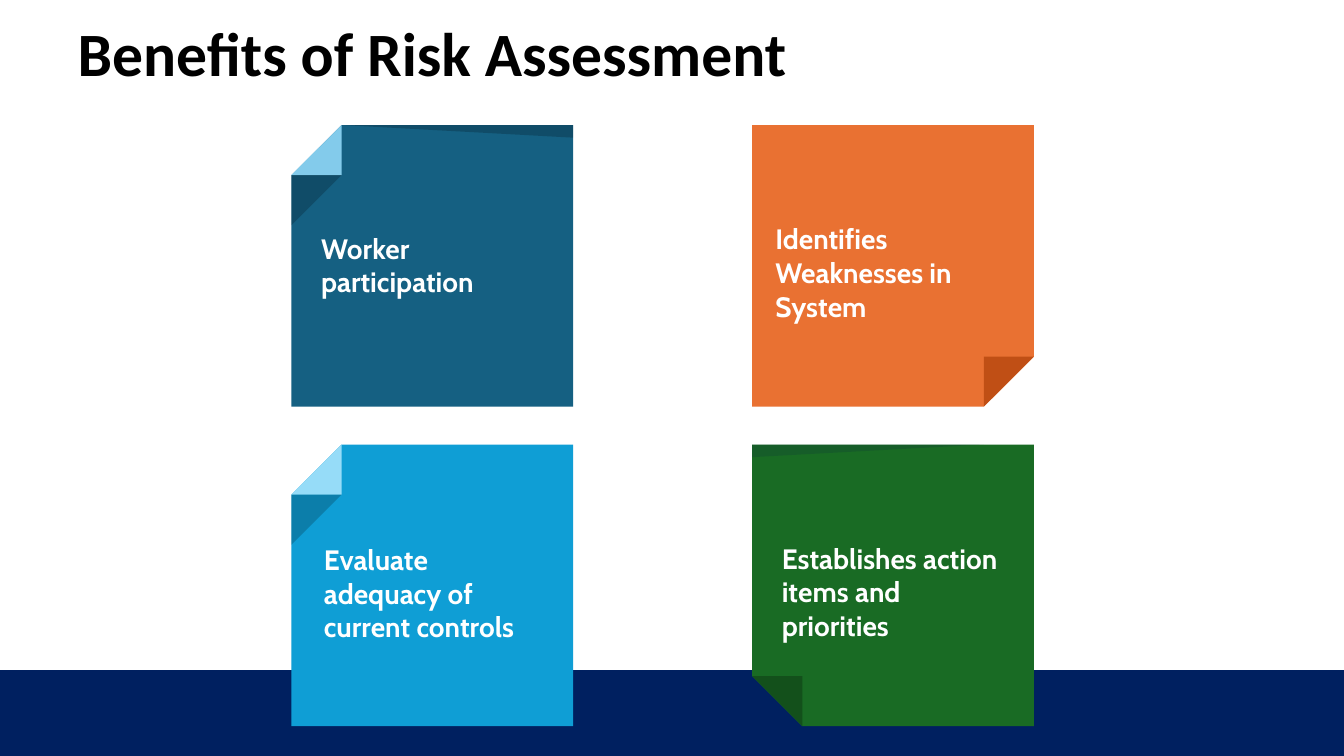
from dataclasses import dataclass

from lxml.etree import SubElement
from pptx import Presentation
from pptx.dml.color import RGBColor
from pptx.enum.shapes import MSO_SHAPE
from pptx.enum.text import MSO_AUTO_SIZE, PP_ALIGN
from pptx.oxml.ns import qn
from pptx.util import Inches, Pt


@dataclass(frozen=True)
class Theme:
    """Colours, fonts, type sizes and opacity."""
    navy: str = "002060"
    black: str = "000000"
    white: str = "FFFFFF"
    shade: str = "0E2841"
    teal: str = "156082"
    teal_flap: str = "83CBEB"
    orange: str = "E97132"
    orange_flap: str = "C04F15"
    blue: str = "0F9ED5"
    blue_flap: str = "96DCF8"
    green: str = "196B24"
    green_flap: str = "13501B"
    title_font: str = "Calibri"
    label_font: str = "Cabin"
    title_size: int = 44
    label_size: int = 20
    shade_opacity: int = 20


@dataclass(frozen=True)
class Grid:
    """Note positions by column and row, in inches; fold and shade are shares of a note."""
    left: float = 2.89
    top: float = 1.24
    column_step: float = 4.57
    row_step: float = 3.17
    side: float = 2.795
    fold: float = 0.178
    shade: float = 0.045

    def place(self, cell, share):
        column, row = cell
        x, y = share
        return (Inches(self.left + column * self.column_step + x * self.side),
                Inches(self.top + row * self.row_step + y * self.side))


def mirror(points, flip_x, flip_y):
    """Reflect unit-square points across the chosen axes."""
    return [(1 - x if flip_x else x, 1 - y if flip_y else y) for x, y in points]


class SlideBuilder:
    """Draws each kind of element on one slide in one style."""

    def __init__(self, deck, theme, grid):
        self.deck, self.theme, self.grid = deck, theme, grid
        self.page = deck.slides.add_slide(deck.slide_layouts[6])

    def fill(self, shape, color, opacity=100):
        shape.shadow.inherit = False
        shape.fill.solid()
        shape.fill.fore_color.rgb = RGBColor.from_string(color)
        if opacity < 100:
            tint = shape.fill._xPr.find(qn("a:solidFill"))[0]
            SubElement(tint, qn("a:alpha"), val=str(opacity * 1000))

    def band(self, top, height):
        width, full = self.deck.slide_width, self.deck.slide_height
        bar = self.page.shapes.add_shape(
            MSO_SHAPE.RECTANGLE, 0, int(full * top), width, int(full * height))
        self.fill(bar, self.theme.navy)
        bar.line.color.rgb = RGBColor.from_string(self.theme.navy)
        bar.line.width = Pt(1.5)

    def text(self, shapes, frame, words, font, size, color, wrap=True, align=PP_ALIGN.LEFT):
        box = shapes.add_textbox(*frame)
        box.text_frame.word_wrap = wrap
        box.text_frame.auto_size = MSO_AUTO_SIZE.SHAPE_TO_FIT_TEXT
        para = box.text_frame.paragraphs[0]
        para.text = words
        para.alignment = align
        para.font.name = font
        para.font.size = Pt(size)
        para.font.bold = True
        para.font.color.rgb = RGBColor.from_string(color)

    def title(self, words, left, top, width, height):
        full_width, full_height = self.deck.slide_width, self.deck.slide_height
        frame = [int(full_width * left), int(full_height * top),
                 int(full_width * width), int(full_height * height)]
        self.text(self.page.shapes, frame, words, self.theme.title_font,
                  self.theme.title_size, self.theme.black, False, PP_ALIGN.CENTER)

    def polygon(self, shapes, cell, points, color, opacity=100):
        start, *rest = [self.grid.place(cell, point) for point in points]
        outline = shapes.build_freeform(*start)
        outline.add_line_segments(rest, close=True)
        piece = outline.convert_to_shape()
        self.fill(piece, color, opacity)
        piece.line.fill.background()

    def note(self, cell, words, label, color, flap_color, flip=(False, False),
             under_fold=False, edge_shade=None, edge_flip=False):
        fold, depth = self.grid.fold, self.grid.shade
        opacity = self.theme.shade_opacity
        shapes = self.page.shapes.add_group_shape().shapes
        sheet = [(fold, 0), (1, 0), (1, 1), (0, 1), (0, fold)]
        flap = [(fold, 0), (fold, fold), (0, fold)]
        self.polygon(shapes, cell, mirror(sheet, *flip), color)
        self.polygon(shapes, cell, mirror(flap, *flip), flap_color)
        if under_fold:
            under = [(0, fold), (fold, fold), (0, 2 * fold)]
            self.polygon(shapes, cell, under, self.theme.black, opacity)
        if edge_shade:
            edge = mirror([(fold, 0), (1, 0), (1, depth)], edge_flip, False)
            self.polygon(shapes, cell, edge, edge_shade, opacity)
        left, top, width, lines = label
        size = [Inches(width * self.grid.side), Inches(0.1 + lines * 0.335)]
        self.text(shapes, [*self.grid.place(cell, (left, top)), *size], words,
                  self.theme.label_font, self.theme.label_size, self.theme.white)


def main():
    deck = Presentation()
    deck.slide_width, deck.slide_height = Inches(13.33), Inches(7.5)
    theme = Theme()
    slide = SlideBuilder(deck, theme, Grid())
    slide.band(0.887, 0.113)
    slide.note((0, 0), "Worker participation", (0.07, 0.36, 0.87, 2),
               theme.teal, theme.teal_flap, under_fold=True, edge_shade=theme.black)
    slide.note((1, 1), "Establishes action items and priorities", (0.07, 0.326, 0.87, 3),
               theme.green, theme.green_flap, flip=(False, True),
               edge_shade=theme.shade, edge_flip=True)
    slide.note((1, 0), "Identifies Weaknesses in System", (0.047, 0.326, 0.89, 3),
               theme.orange, theme.orange_flap, flip=(True, True))
    slide.note((0, 1), "Evaluate adequacy of current controls", (0.08, 0.33, 0.87, 3),
               theme.blue, theme.blue_flap, under_fold=True)
    slide.title("Benefits of Risk Assessment", 0.048, 0.013, 0.548, 0.112)
    deck.save("out.pptx")


if __name__ == "__main__":
    main()
